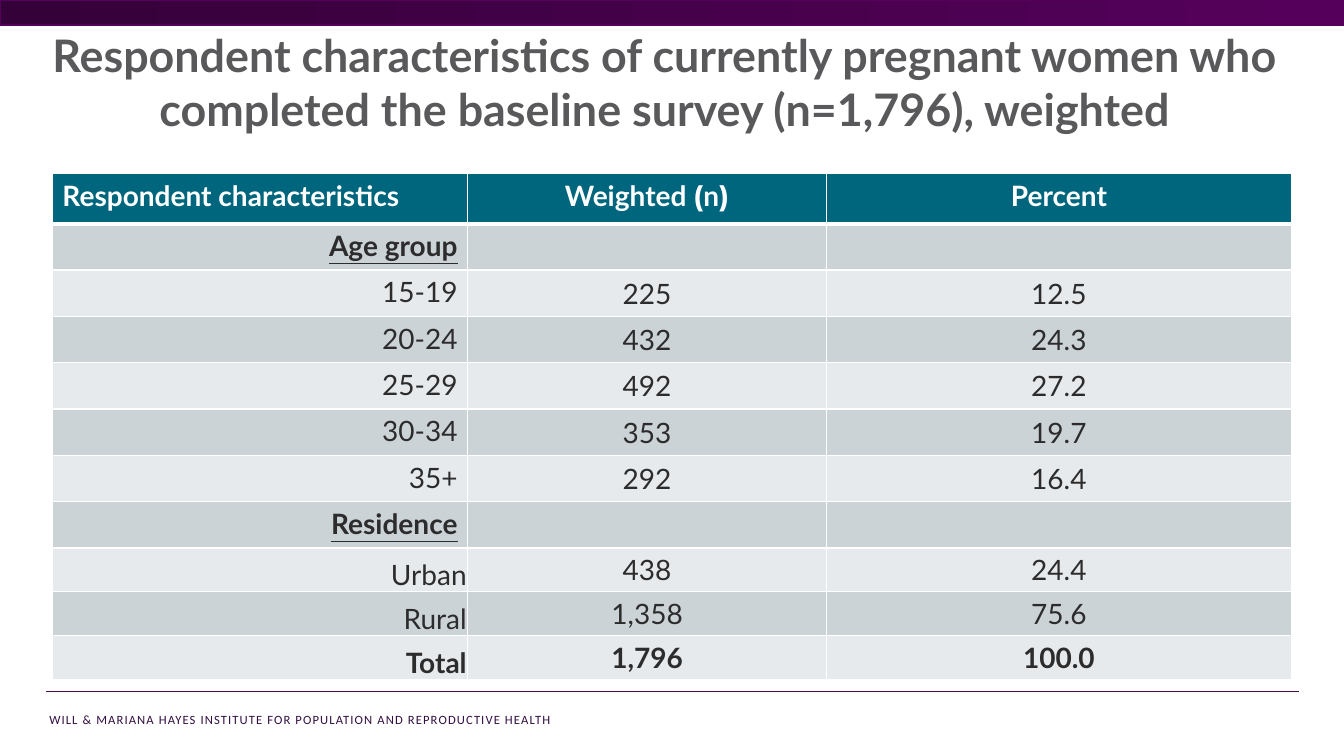
import dataclasses
import typing

import lxml.etree
import pptx
import pptx.dml.color
import pptx.enum.shapes
import pptx.enum.text
import pptx.oxml.ns
import pptx.util

WIDTH = pptx.util.Inches(13.33)
HEIGHT = pptx.util.Inches(7.5)
ALIGN = pptx.enum.text.PP_ALIGN
ANCHOR = pptx.enum.text.MSO_ANCHOR

TEAL, WHITE, INK = "00667D", "FFFFFF", "2C2C2D"
BANDS = ("CCD3D7", "E7EAEC")
TABLE_LEFT, TABLE_TOP = 3.9, 22.93
COLUMN_SHARES = (30.9, 26.7, 34.58)
HEADINGS = (
    (("Respondent characteristics", "Lato"),),
    (("Weighted ", "Lato"), ("(", "Montserrat"), ("n", "Lato"), (")", "Montserrat")),
    (("Percent", "Lato"),),
)


@dataclasses.dataclass
class Row:
    label: str
    count: str = ""
    percent: str = ""
    group: bool = False
    total: bool = False
    compact: bool = False

    @property
    def share(self) -> float:
        return 5.73 if self.compact else 6.13


ROWS = [
    Row("Age group", group=True),
    Row("15-19", "225", "12.5"),
    Row("20-24", "432", "24.3"),
    Row("25-29", "492", "27.2"),
    Row("30-34", "353", "19.7"),
    Row("35+", "292", "16.4"),
    Row("Residence", group=True),
    Row("Urban", "438", "24.4", compact=True),
    Row("Rural", "1,358", "75.6", compact=True),
    Row("Total", "1,796", "100.0", total=True, compact=True),
]


def x(percent: float) -> int:
    return round(WIDTH * percent / 100)


def y(percent: float) -> int:
    return round(HEIGHT * percent / 100)


def rgb(value: str) -> pptx.dml.color.RGBColor:
    return pptx.dml.color.RGBColor.from_string(value)


def style(r: typing.Any, size: float, color: str, name: str, bold: bool = False) -> None:
    r.font.size = pptx.util.Pt(size)
    r.font.color.rgb = rgb(color)
    r.font.name = name
    r.font.bold = bold


def add_text(s: typing.Any, box: tuple, text: str, align: ALIGN) -> typing.Any:
    left, top, width, height = box
    tf = s.shapes.add_textbox(x(left), y(top), x(width), y(height)).text_frame
    tf.word_wrap = True
    tf.text = text
    p = tf.paragraphs[0]
    p.alignment = align
    return p.runs[0]


def finish_cell(cell: typing.Any, fill: str, top: float = 1, bottom: float = 1) -> None:
    tc_pr = cell._tc.get_or_add_tcPr()
    for side, points in (("L", 1), ("R", 1), ("T", top), ("B", bottom)):
        ln = lxml.etree.SubElement(tc_pr, pptx.oxml.ns.qn(f"a:ln{side}"), w=str(pptx.util.Pt(points)))
        solid = lxml.etree.SubElement(ln, pptx.oxml.ns.qn("a:solidFill"))
        lxml.etree.SubElement(solid, pptx.oxml.ns.qn("a:srgbClr"), val=WHITE)
    cell.fill.solid()
    cell.fill.fore_color.rgb = rgb(fill)


def fill_header(table: typing.Any) -> None:
    for column, pieces in enumerate(HEADINGS):
        cell = table.cell(0, column)
        finish_cell(cell, TEAL, bottom=3)
        p = cell.text_frame.paragraphs[0]
        p.alignment = ALIGN.CENTER if column else ALIGN.LEFT
        for text, name in pieces:
            r = p.add_run()
            r.text = text
            style(r, 20, WHITE, name, True)


def fill_row(table: typing.Any, index: int, row: Row) -> None:
    for column, text in enumerate((row.label, row.count, row.percent)):
        cell = table.cell(index, column)
        finish_cell(cell, BANDS[(index - 1) % 2], top=3 if index == 1 else 1)
        if column:
            cell.vertical_anchor = ANCHOR.MIDDLE
        elif row.compact:
            cell.vertical_anchor = ANCHOR.BOTTOM
            cell.margin_left = cell.margin_right = cell.margin_top = pptx.util.Inches(0.01)
            cell.margin_bottom = 0
        if not text:
            continue
        cell.text_frame.text = text
        p = cell.text_frame.paragraphs[0]
        p.alignment = ALIGN.CENTER if column else ALIGN.RIGHT
        style(p.runs[0], 20, INK, "Lato", row.group or row.total)
        p.runs[0].font.underline = row.group


def add_table(s: typing.Any) -> None:
    heights = [6.67] + [row.share for row in ROWS]
    table = s.shapes.add_table(
        len(heights), len(COLUMN_SHARES), x(TABLE_LEFT), y(TABLE_TOP),
        x(sum(COLUMN_SHARES)), y(sum(heights))).table
    for column, share in zip(table.columns, COLUMN_SHARES):
        column.width = x(share)
    for line, share in zip(table.rows, heights):
        line.height = y(share)
    fill_header(table)
    for index, row in enumerate(ROWS, 1):
        fill_row(table, index, row)


def add_banner(s: typing.Any) -> None:
    sp = s.shapes.add_shape(pptx.enum.shapes.MSO_SHAPE.RECTANGLE, 0, 0, WIDTH, y(3.33))
    sp.shadow.inherit = False
    sp.fill.gradient()
    sp.fill.gradient_angle = 0
    for stop, color, position in zip(sp.fill.gradient_stops, ("350139", "55015B"), (0, 1)):
        stop.color.rgb = rgb(color)
        stop.position = position
    sp.line.color.rgb = rgb("55015B")
    sp.line.width = pptx.util.Pt(1)


def add_footer(s: typing.Any) -> None:
    r = add_text(s, (2.93, 93.47, 55.36, 3.33),
                 "WILL & MARIANA HAYES INSTITUTE FOR POPULATION AND REPRODUCTIVE HEALTH",
                 ALIGN.LEFT)
    style(r, 9, "330F42", "Calibri")
    r._r.get_or_add_rPr().set("spc", "80")
    rule = s.shapes.add_connector(
        pptx.enum.shapes.MSO_CONNECTOR.STRAIGHT, x(96.62), y(91.47), x(3.45), y(91.47))
    rule.line.color.rgb = rgb("411044")
    rule.line.width = pptx.util.Pt(1.25)
    lxml.etree.SubElement(rule._element.spPr, pptx.oxml.ns.qn("a:effectLst"))


def main() -> None:
    prs = pptx.Presentation()
    prs.slide_width, prs.slide_height = WIDTH, HEIGHT
    s = prs.slides.add_slide(prs.slide_layouts[6])
    add_footer(s)
    add_banner(s)
    add_table(s)
    title = add_text(
        s, (0.75, 3.07, 97.45, 15.73),
        "Respondent characteristics of currently pregnant women who completed "
        "the baseline survey (n=1,796), weighted", ALIGN.CENTER)
    style(title, 32, "59595B", "Lato", True)
    prs.save("out.pptx")


if __name__ == "__main__":
    main()
